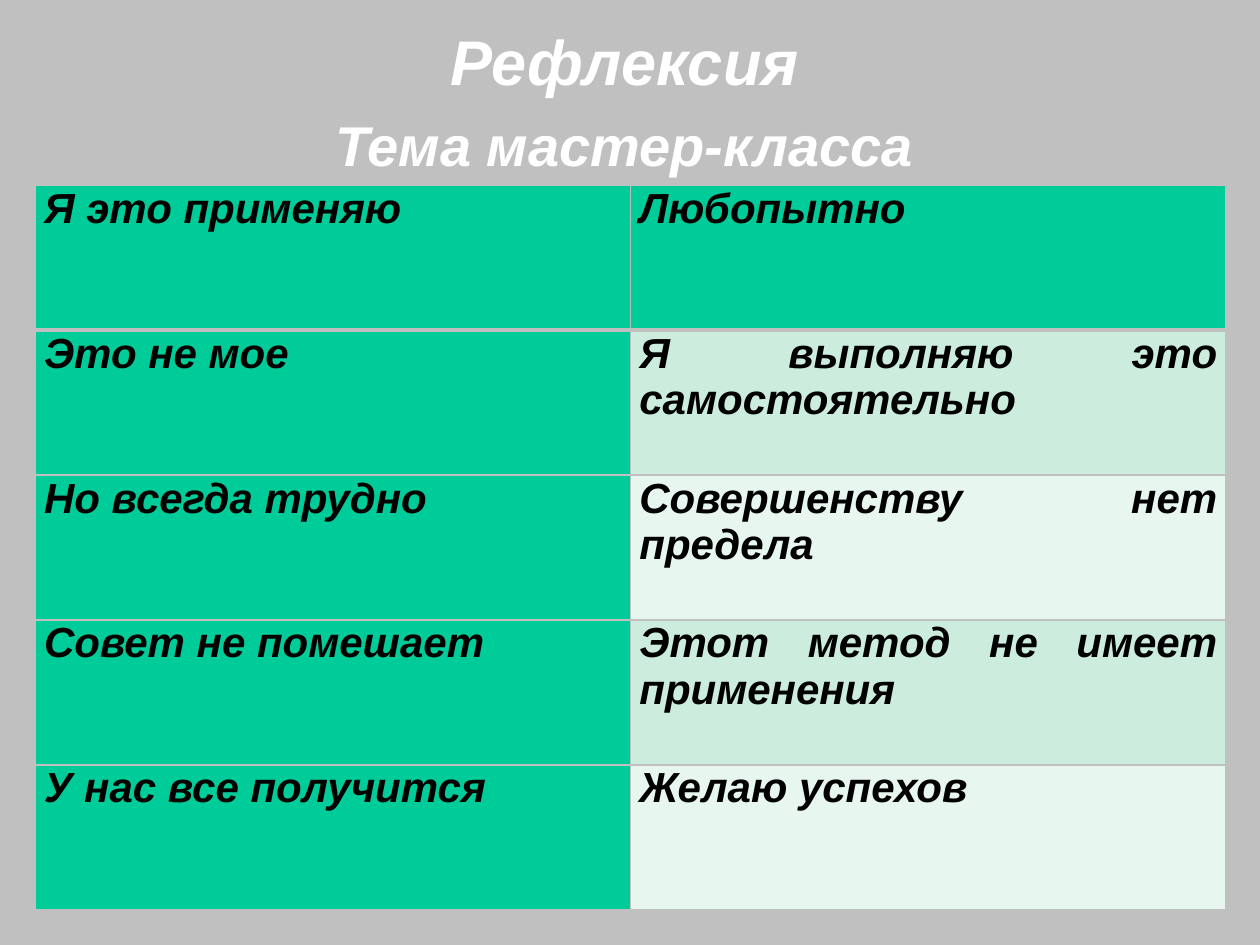
from lxml import etree
from pptx import Presentation
from pptx.dml.color import RGBColor
from pptx.enum import text
from pptx.oxml import ns
from pptx.util import Inches, Pt

THEME = {
    "font": "Arial",
    "background": "C0C0C0",
    "title": "FFFFFF",
    "ink": "000000",
    "green": "00CC99",
    "bands": ("E7F6EF", "CCECDE"),
    "heading_size": 36,
    "topic_size": 32,
    "cell_size": 24,
}

ROWS = [
    ("Я это применяю", "Любопытно"),
    ("Это не мое", "Я выполняю это самостоятельно"),
    ("Но всегда трудно", "Совершенству нет предела"),
    ("Совет не помешает", "Этот метод не имеет применения"),
    ("У нас все получится", "Желаю успехов"),
]


def write(paragraph, words, *, size, color, align, before=0):
    run = paragraph.add_run()
    run.text = words
    run.font.name = THEME["font"]
    run.font.size = Pt(size)
    run.font.bold = run.font.italic = True
    run.font.color.rgb = RGBColor.from_string(color)
    paragraph.alignment = align
    if before:
        paragraph.space_before = Pt(before)


def add_border(cell, side, width):
    properties = cell._tc.get_or_add_tcPr()
    line = etree.Element(ns.qn(f"a:ln{side}"), w=str(Pt(width)))
    fill = etree.SubElement(line, ns.qn("a:solidFill"))
    etree.SubElement(fill, ns.qn("a:srgbClr"), val=THEME["background"])
    properties.append(line)


presentation = Presentation()
presentation.slide_width = Inches(10)
presentation.slide_height = Inches(7.5)
slide = presentation.slides.add_slide(presentation.slide_layouts[6])
slide.background.fill.solid()
slide.background.fill.fore_color.rgb = RGBColor.from_string(THEME["background"])

title = slide.shapes.add_textbox(Inches(0.42), 0, Inches(9.25), Inches(1.37))
frame = title.text_frame
frame.word_wrap = True
frame.margin_top = Inches(0.18)
heading = frame.paragraphs[0]
write(heading, "Рефлексия", size=THEME["heading_size"], color=THEME["title"],
      align=text.PP_ALIGN.CENTER)
heading._p.get_or_add_pPr().set("marR", str(Inches(0.18)))
write(frame.add_paragraph(), "Тема мастер-класса", size=THEME["topic_size"],
      color=THEME["title"], align=text.PP_ALIGN.CENTER, before=7)

table = slide.shapes.add_table(
    len(ROWS), 2, Inches(0.28), Inches(1.47), Inches(9.45), Inches(1.15 * len(ROWS))
).table

for row, labels in enumerate(ROWS):
    for column, label in enumerate(labels):
        cell = table.cell(row, column)
        cell.margin_left = cell.margin_right = Inches(0.07)
        cell.margin_top = cell.margin_bottom = 0
        write(cell.text_frame.paragraphs[0], label, size=THEME["cell_size"],
              color=THEME["ink"], align=text.PP_ALIGN.JUSTIFY)
        for side in "LRTB":
            at_header_edge = (row, side) in ((0, "B"), (1, "T"))
            add_border(cell, side, 3 if at_header_edge else 1)
        is_heading = row == 0 or column == 0
        color = THEME["green"] if is_heading else THEME["bands"][row % 2]
        cell.fill.solid()
        cell.fill.fore_color.rgb = RGBColor.from_string(color)

presentation.save("out.pptx")
